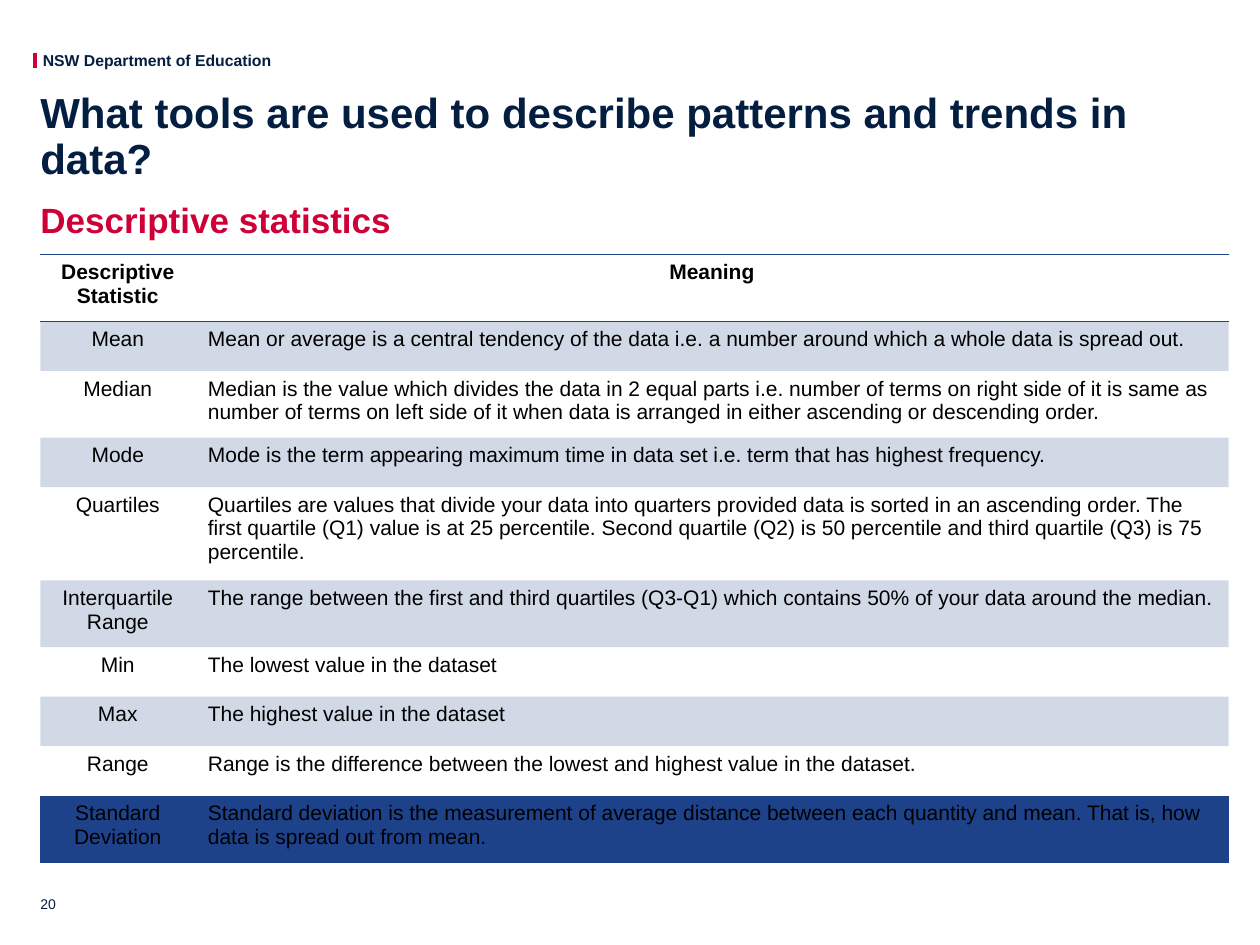
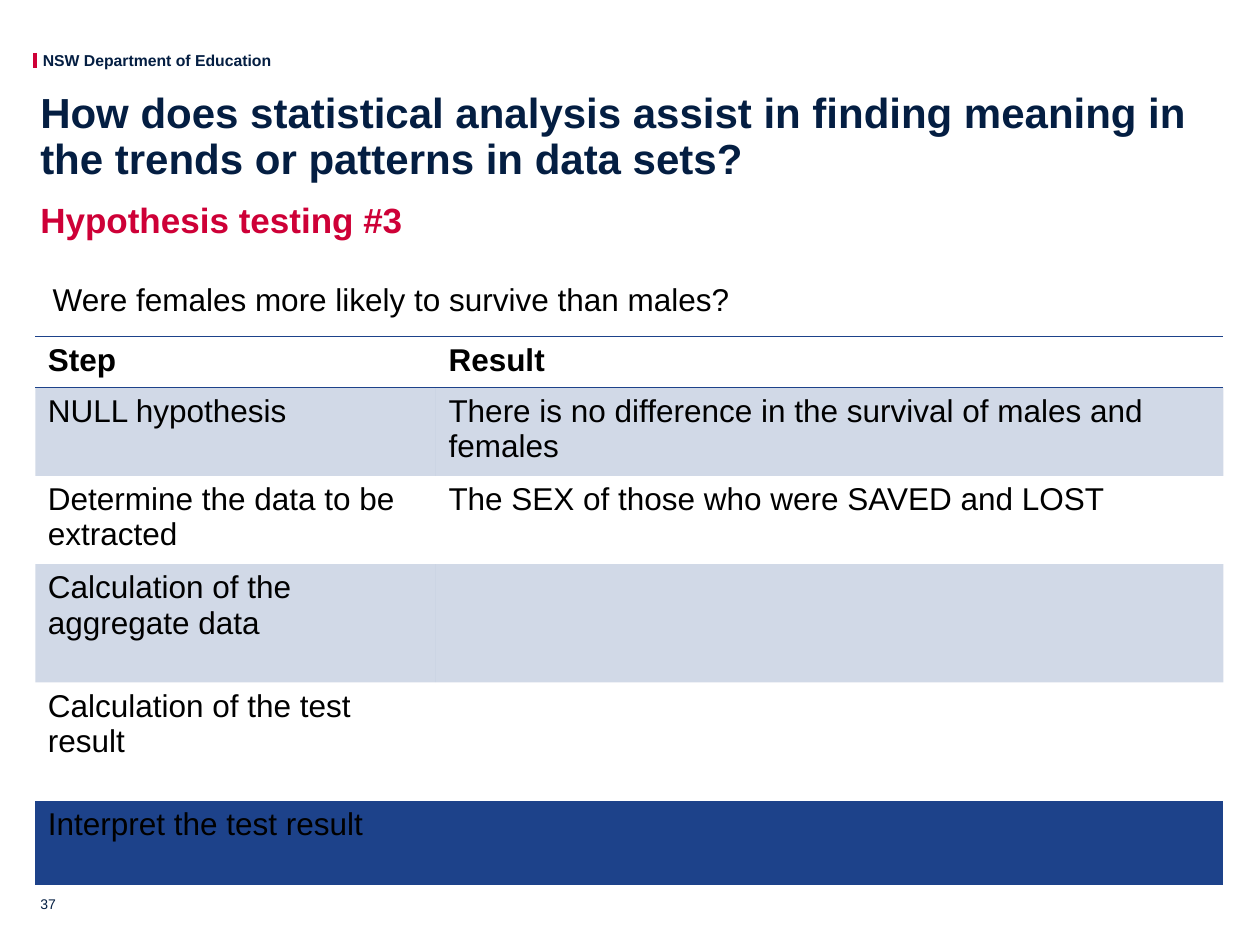
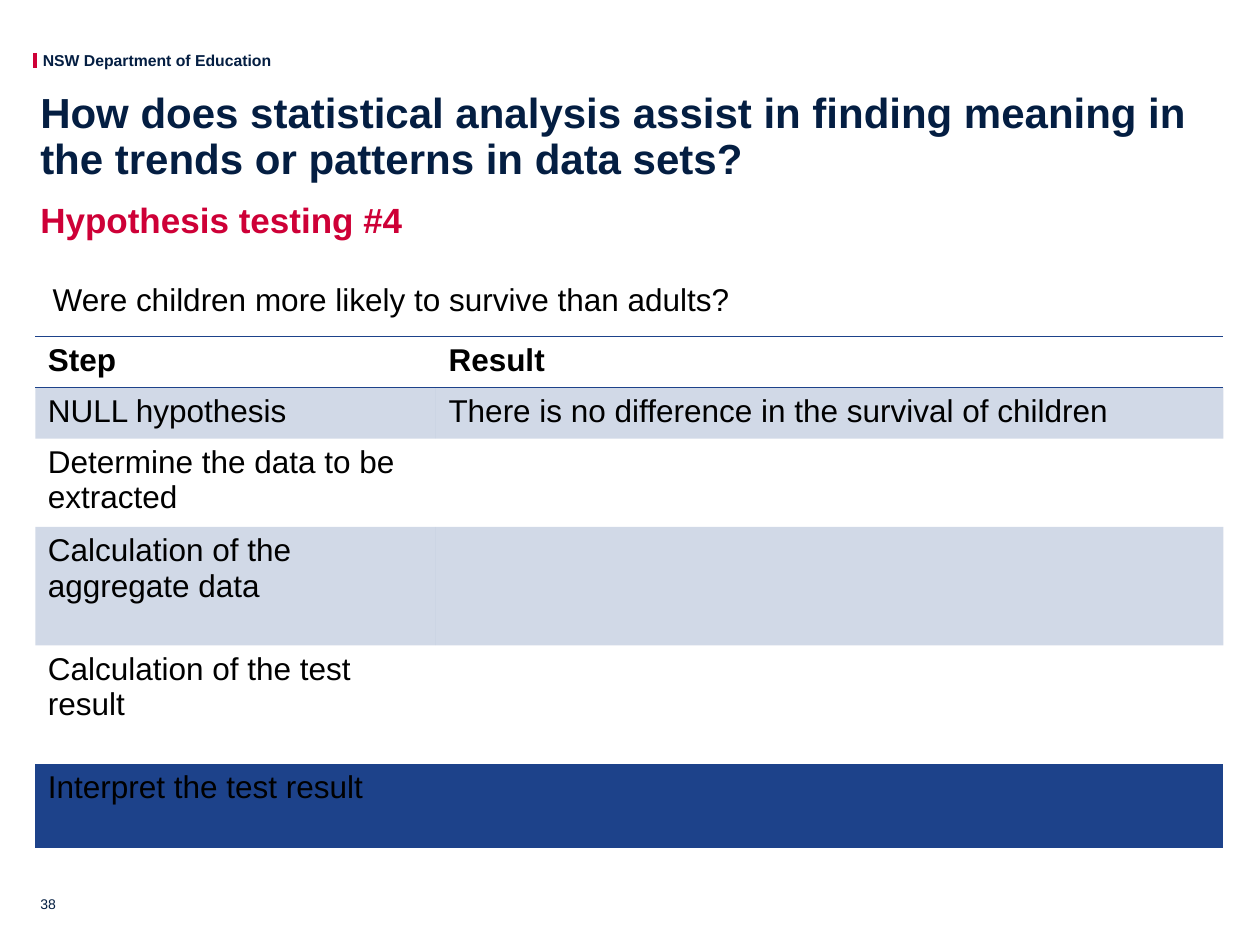
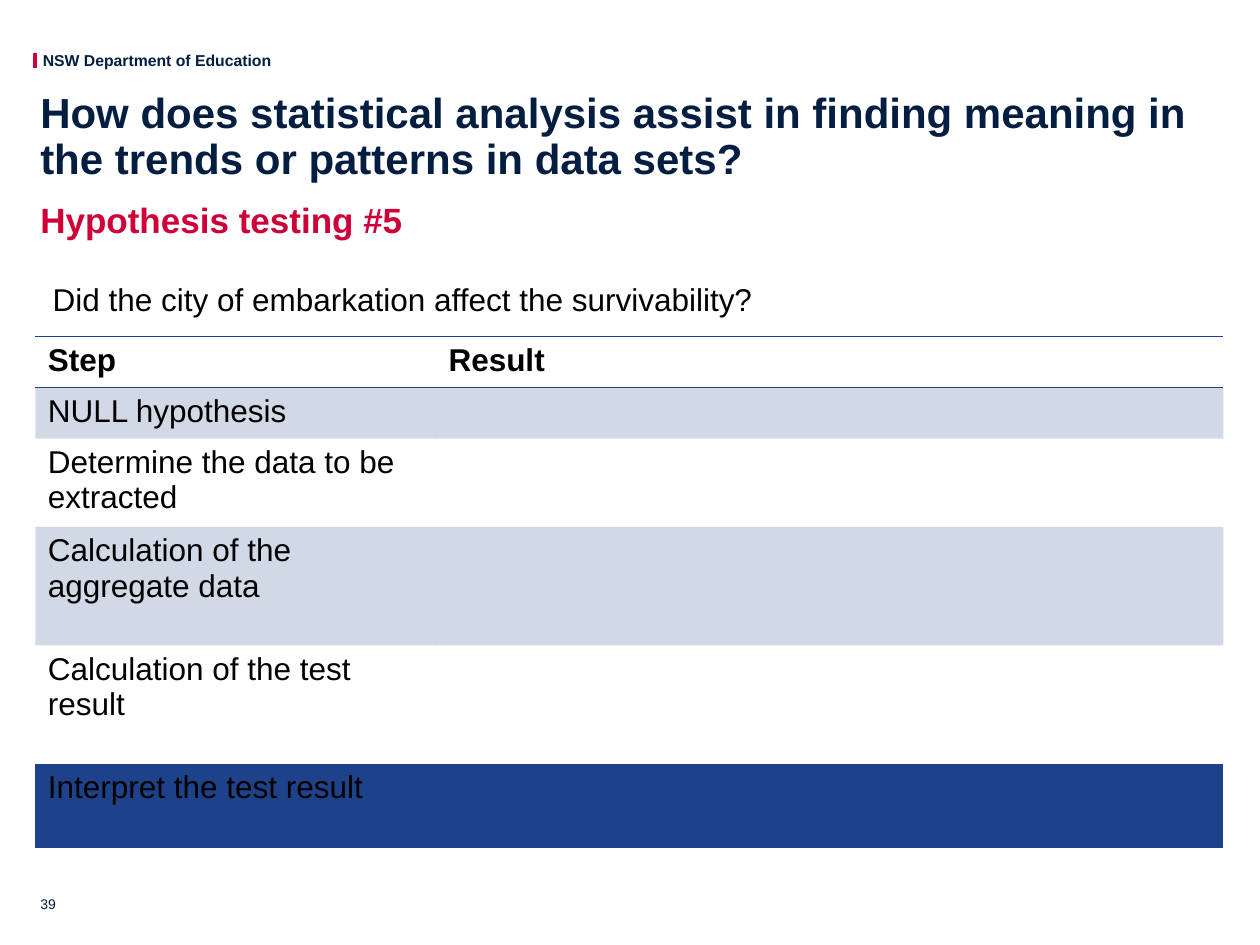
"""Build four statistics lesson slides with a shared heading and table style."""
import lxml.etree
import pptx
import pptx.dml.color
import pptx.enum.shapes
import pptx.enum.text
import pptx.oxml
import pptx.oxml.ns
import pptx.util

COLOURS = {"navy": "041E42", "red": "CE0037", "blue": "1D428A", "black": "000000"}
FONT = "Arial"
COLUMNS, ROWS = 100, 75
MARGIN, WIDTH = 3.2, 94.3
PLAIN_TABLE = "{2D5ABB26-0587-4C30-8999-92F81FD0307C}"
ALIGN = pptx.enum.text.PP_ALIGN
ANCHOR = pptx.enum.text.MSO_ANCHOR

TOOLS_TITLE = "What tools are used to describe patterns and trends in data?"
ANALYSIS_TITLE = ("How does statistical analysis assist in finding meaning in "
                  "the trends or patterns in data sets?")
STATISTICS = [
    ("Descriptive Statistic", "Meaning"),
    ("Mean", "Mean or average is a central tendency of the data i.e. a number around "
     "which a whole data is spread out."),
    ("Median", "Median is the value which divides the data in 2 equal parts i.e. number "
     "of terms on right side of it is same as number of terms on left side of it when "
     "data is arranged in either ascending or descending order."),
    ("Mode", "Mode is the term appearing maximum time in data set i.e. term that has "
     "highest frequency."),
    ("Quartiles", "Quartiles are values that divide your data into quarters provided "
     "data is sorted in an ascending order. The first quartile (Q1) value is at 25 "
     "percentile. Second quartile (Q2) is 50 percentile and third quartile (Q3) is 75 "
     "percentile."),
    ("Interquartile Range", "The range between the first and third quartiles (Q3-Q1) "
     "which contains 50% of your data around the median."),
    ("Min", "The lowest value in the dataset"),
    ("Max", "The highest value in the dataset"),
    ("Range", "Range is the difference between the lowest and highest value in the "
     "dataset."),
    ("Standard Deviation", "Standard deviation is the measurement of average distance "
     "between each quantity and mean. That is, how data is spread out from mean."),
]
STATISTIC_HEIGHTS = [5.3, 3.93, 5.3, 3.93, 7.4, 5.3, 3.93, 3.93, 3.93, 5.3]
STEPS = ["NULL hypothesis", "Determine the data to be extracted",
         "Calculation of the aggregate data", "Calculation of the test result",
         "Interpret the test result"]
ONE_LINE, TWO_LINES, THREE_LINES = 4.06, 6.6, 9.4
HYPOTHESES = [
    (37, 3, "Were females more likely to survive than males?",
     ["There is no difference in the survival of males and females",
      "The SEX of those who were SAVED and LOST"], TWO_LINES),
    (38, 4, "Were children more likely to survive than adults?",
     ["There is no difference in the survival of children"], ONE_LINE),
    (39, 5, "Did the city of embarkation affect the survivability?", [], ONE_LINE),
]


class Deck:
    """Hold the presentation, its style and the current slide."""

    def __init__(self):
        """Open an empty presentation of 10 by 7.5 inches."""
        self.show = pptx.Presentation()
        self.show.slide_width = pptx.util.Inches(10)
        self.show.slide_height = pptx.util.Inches(7.5)
        self.slide = None

    def x(self, columns):
        """Turn grid columns into a length."""
        return round(self.show.slide_width * columns / COLUMNS)

    def y(self, rows):
        """Turn grid rows into a length."""
        return round(self.show.slide_height * rows / ROWS)

    def colour(self, name):
        """Look up a colour by name."""
        return pptx.dml.color.RGBColor.from_string(COLOURS[name])

    def style(self, paragraph, size, colour, bold=False):
        """Set the font of a whole paragraph."""
        font = paragraph.font
        font.name, font.size, font.bold = FONT, pptx.util.Pt(size), bold
        font.color.rgb = self.colour(colour)

    def text(self, place, words, size, colour, bold=False, insets=(0, 0, 0, 0),
             anchor=ANCHOR.TOP, spacing=None, after=None, wrap=True):
        """Add one paragraph in a box, with insets in grid units."""
        left, top, width, height = place
        frame = self.slide.shapes.add_textbox(
            self.x(left), self.y(top), self.x(width), self.y(height)).text_frame
        frame.margin_left, frame.margin_right = self.x(insets[0]), self.x(insets[2])
        frame.margin_top, frame.margin_bottom = self.y(insets[1]), self.y(insets[3])
        frame.word_wrap, frame.vertical_anchor = wrap, anchor
        paragraph = frame.paragraphs[0]
        paragraph.text = words
        paragraph.line_spacing = spacing
        if after is not None:
            paragraph.space_after = pptx.util.Pt(after)
        self.style(paragraph, size, colour, bold)

    def accent(self, column, top, bottom):
        """Draw the upright red mark beside the department name."""
        mark = self.slide.shapes.add_connector(
            pptx.enum.shapes.MSO_CONNECTOR.STRAIGHT,
            self.x(column), self.y(top), self.x(column), self.y(bottom))
        mark.line.color.rgb = self.colour("red")
        mark.line.width = pptx.util.Pt(2.5)
        lxml.etree.SubElement(mark._element.spPr, pptx.oxml.ns.qn("a:effectLst"))

    def page(self, number, title, subtitle):
        """Start a slide with its department name, headings and number."""
        self.slide = self.show.slides.add_slide(self.show.slide_layouts[6])
        self.accent(2.8, 4.2, 5.4)
        self.text((3.4, 4, 18.3, 1.5), "NSW Department of Education", 9, "navy", True,
                  wrap=False)
        self.text((MARGIN, 13.6, 94.4, 4.6), subtitle, 20, "red", True,
                  insets=(0, 0.5, 1, 0.5), spacing=1.5, after=4.5)
        self.text((MARGIN, 8.2, WIDTH, 5.5), title, 24, "navy", True,
                  anchor=ANCHOR.MIDDLE, spacing=0.9)
        self.text((MARGIN, 68.4, 3.3, 4), str(number), 8, "navy", anchor=ANCHOR.BOTTOM)

    def question(self, words):
        """Add the question above a table of steps."""
        self.text((MARGIN, 20.2, 94.4, 46.3), words, 18, "black",
                  insets=(1, 0.5, 1, 0.5), spacing=1.5, after=4.5)

    def rule(self, cell, side):
        """Draw a thin blue border on one side of a cell."""
        cell._tc.get_or_add_tcPr().append(pptx.oxml.parse_xml(
            f'<a:{side} {pptx.oxml.ns.nsdecls("a")} w="12700"><a:solidFill>'
            f'<a:srgbClr val="{COLOURS["blue"]}"/></a:solidFill></a:{side}>'))

    def band(self, cell):
        """Fill a cell with a pale, see-through blue."""
        cell.fill.solid()
        cell.fill.fore_color.rgb = self.colour("blue")
        tint = cell._tc.tcPr.find(".//" + pptx.oxml.ns.qn("a:srgbClr"))
        lxml.etree.SubElement(tint, pptx.oxml.ns.qn("a:alpha")).set("val", "20000")

    def table(self, left, top, widths, heights, rows, size, centred=()):
        """Add a ruled table with banded rows; centred holds (row, column) pairs."""
        table = self.slide.shapes.add_table(
            len(rows), len(widths), self.x(left), self.y(top),
            self.x(sum(widths)), self.y(sum(heights))).table
        table.first_row = table.horz_banding = False
        table._tbl.tblPr.find(pptx.oxml.ns.qn("a:tableStyleId")).text = PLAIN_TABLE
        for column, width in zip(table.columns, widths):
            column.width = self.x(width)
        for r, (row, height, entries) in enumerate(zip(table.rows, heights, rows)):
            row.height = self.y(height)
            for c, (cell, words) in enumerate(zip(row.cells, entries)):
                paragraph = cell.text_frame.paragraphs[0]
                paragraph.text = words
                if (r, c) in centred:
                    paragraph.alignment = ALIGN.CENTER
                self.style(paragraph, size, "black", r == 0)
                if r == 0:
                    self.rule(cell, "lnT")
                if r in (0, len(rows) - 1):
                    self.rule(cell, "lnB")
                if r % 2:
                    self.band(cell)
                else:
                    cell.fill.background()


def main():
    """Build the slides and save them."""
    deck = Deck()
    deck.page(20, TOOLS_TITLE, "Descriptive statistics")
    centred = {(r, 0) for r in range(len(STATISTICS))} | {(0, 1)}
    deck.table(MARGIN, 20.2, [12.3, 82], STATISTIC_HEIGHTS, STATISTICS, 12, centred)

    for number, test, question, results, first_height in HYPOTHESES:
        deck.page(number, ANALYSIS_TITLE, f"Hypothesis testing #{test}")
        deck.question(question)
        results = results + [""] * (len(STEPS) - len(results))
        heights = [ONE_LINE, first_height, TWO_LINES, THREE_LINES, THREE_LINES, TWO_LINES]
        deck.table(2.8, 26.7, [31.8, 62.5], heights,
                   [("Step", "Result"), *zip(STEPS, results)], 18)
    deck.show.save("out.pptx")


if __name__ == "__main__":
    main()
